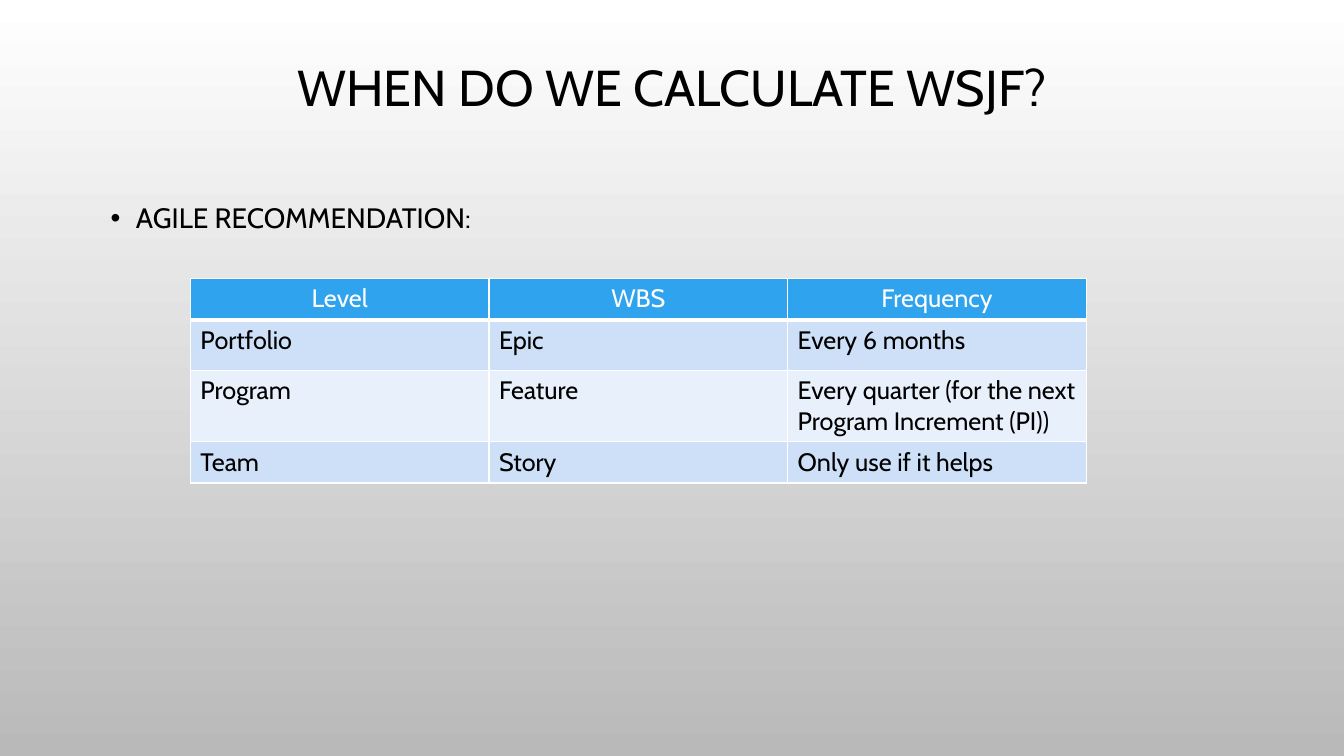
import pptx
import pptx.util
import pptx.dml.color
import pptx.enum.text
import pptx.oxml
import pptx.oxml.ns
from dataclasses import dataclass

Pt = pptx.util.Pt
Align = pptx.enum.text.PP_ALIGN
Anchor = pptx.enum.text.MSO_ANCHOR


@dataclass(frozen=True)
class Theme:
    font: str = "Cabin"
    ink: str = "000000"
    white: str = "FFFFFF"
    grey: str = "B9B9B9"
    head: str = "2FA3EE"
    bands: tuple = ("CDE0F8", "E8F0FC")
    title: int = 36
    body: int = 20
    cell: int = 18


def rgb(code):
    return pptx.dml.color.RGBColor.from_string(code)


def node(xml):
    """Parse an element whose root tag is in the a: namespace."""
    tag, rest = xml.split(" ", 1)
    return pptx.oxml.parse_xml(f"{tag} {pptx.oxml.ns.nsdecls('a')} {rest}")


class Page:
    def __init__(self, deck, theme):
        self.theme = theme
        self.slide = deck.slides.add_slide(deck.slide_layouts[5])

    def shade(self, top, bottom):
        """Fill the background from top to bottom."""
        fill = self.slide.background.fill
        fill.gradient()
        fill.gradient_angle = 270
        for stop, color in zip(fill.gradient_stops, (top, bottom)):
            stop.color.rgb = rgb(color)

    def style(self, para, size, color, align=Align.LEFT):
        para.alignment = align
        for run in para.runs:
            run.font.name = self.theme.font
            run.font.size = Pt(size)
            run.font.color.rgb = rgb(color)

    def title(self, text, left, top, width, height):
        shape = self.slide.shapes.title
        shape.left, shape.top = Pt(left), Pt(top)
        shape.width, shape.height = Pt(width), Pt(height)
        frame = shape.text_frame
        frame.text = text
        frame.vertical_anchor = Anchor.MIDDLE
        para = frame.paragraphs[0]
        para.line_spacing = 0.9
        self.style(para, self.theme.title, self.theme.ink, Align.CENTER)

    def bullet(self, text, left, top, width, height):
        box = self.slide.shapes.add_textbox(Pt(left), Pt(top), Pt(width), Pt(height))
        frame = box.text_frame
        frame.word_wrap = True
        frame.text = text
        para = frame.paragraphs[0]
        props = para._p.get_or_add_pPr()
        props.set("marL", str(Pt(18)))
        props.set("indent", str(-Pt(18)))
        props.append(node('<a:buFont typeface="Arial"/>'))
        props.append(node('<a:buChar char="•"/>'))
        para.line_spacing = 1.2
        self.style(para, self.theme.body, self.theme.ink)

    def border(self, cell, bottom):
        """Draw white edges; they must come before the fill."""
        props = cell._tc.get_or_add_tcPr()
        edges = {"L": 1, "R": 1, "T": 1, "B": bottom}
        for spot, (side, width) in enumerate(edges.items()):
            props.insert(spot, node(
                f'<a:ln{side} w="{Pt(width)}"><a:solidFill>'
                f'<a:srgbClr val="{self.theme.white}"/></a:solidFill></a:ln{side}>'))

    def table(self, rows, left, top, width, heights):
        theme = self.theme
        count = len(rows[0])
        grid = self.slide.shapes.add_table(
            len(rows), count, Pt(left), Pt(top), Pt(width), Pt(sum(heights))).table
        for col in grid.columns:
            col.width = Pt(width / count)
        for r, (texts, height) in enumerate(zip(rows, heights)):
            grid.rows[r].height = Pt(height)
            head = r == 0
            fill = theme.head if head else theme.bands[(r - 1) % 2]
            for c, text in enumerate(texts):
                cell = grid.cell(r, c)
                cell.text_frame.text = text
                cell.fill.solid()
                cell.fill.fore_color.rgb = rgb(fill)
                self.border(cell, 3 if head else 1)
                para = cell.text_frame.paragraphs[0]
                self.style(para, theme.cell, theme.white if head else theme.ink,
                           Align.CENTER if head else Align.LEFT)
                para.runs[0].font.bold = False


def main():
    deck = pptx.Presentation()
    deck.slide_width, deck.slide_height = Pt(960), Pt(540)
    theme = Theme()
    page = Page(deck, theme)
    page.shade(theme.white, theme.grey)
    page.title("WHEN DO WE CALCULATE WSJF?", 72, 1.5, 816, 126)
    page.bullet("AGILE RECOMMENDATION:", 72, 135, 816, 321)
    page.table([
        ("Level", "WBS", "Frequency"),
        ("Portfolio", "Epic", "Every 6 months"),
        ("Program", "Feature", "Every quarter (for the next Program Increment (PI))"),
        ("Team", "Story", "Only use if it helps"),
    ], 136, 199, 640, (29.5, 36, 51, 29.5))
    deck.save("out.pptx")


if __name__ == "__main__":
    main()
